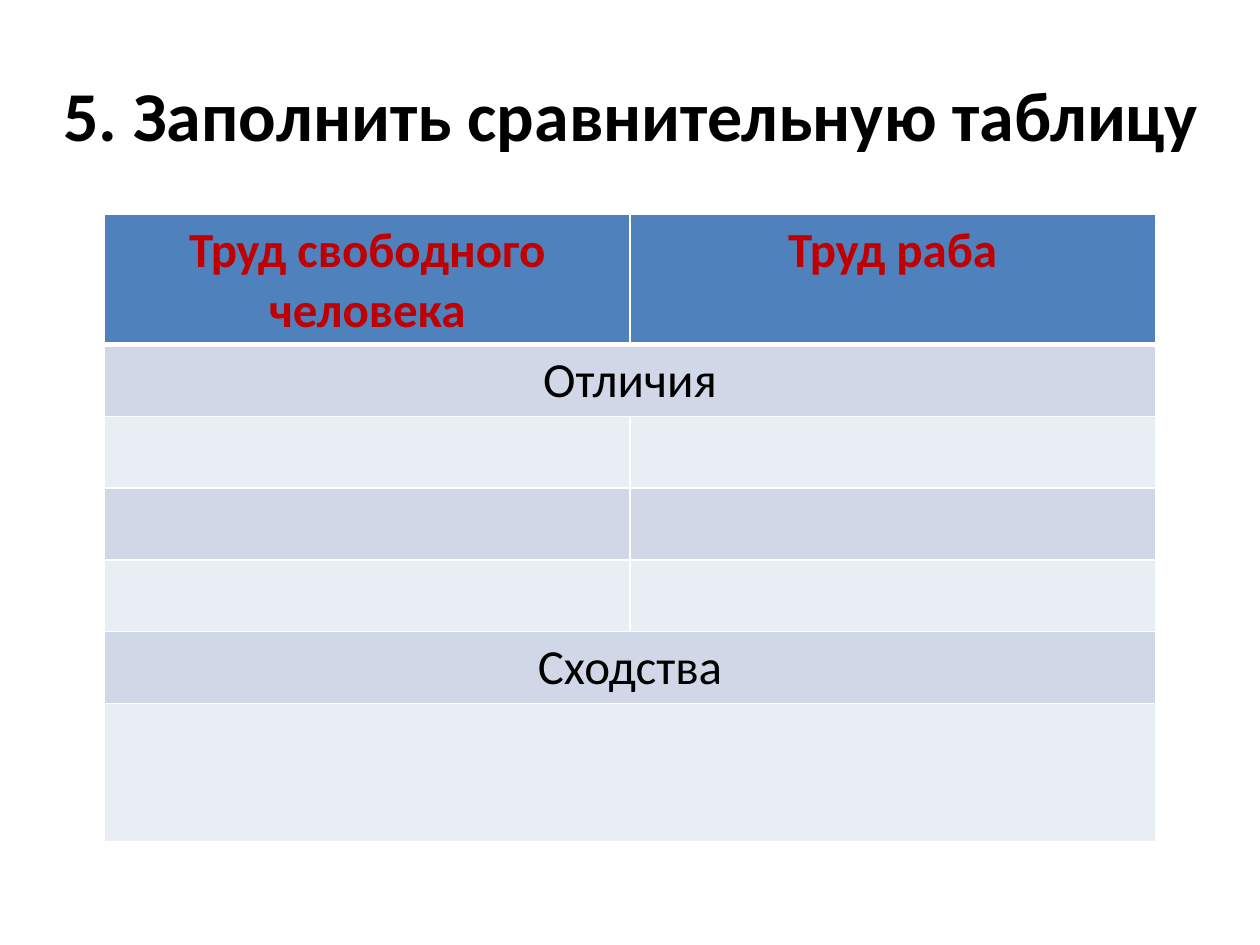
from lxml import etree
from pptx import Presentation
from pptx.dml.color import RGBColor
from pptx.enum.text import PP_ALIGN as Align
from pptx.oxml.ns import qn
from pptx.util import Inches, Pt


def rgb(value):
    return RGBColor.from_string(value)


class SlideBuilder:
    font = "Calibri"
    black = "000000"
    red = "C00000"
    white = "FFFFFF"
    header = "4F81BD"
    bands = ("E9EDF4", "D0D8E8")

    def __init__(self, prs):
        self.s = prs.slides.add_slide(prs.slide_layouts[6])

    def paragraph(self, p, text, size, color, bold):
        p.text = text
        p.alignment = Align.CENTER
        p.font.name = self.font
        p.font.size = Pt(size)
        p.font.bold = bold
        p.font.color.rgb = rgb(color)

    def title(self, text, left, top, width, height):
        box = self.s.shapes.add_textbox(
            Inches(left), Inches(top), Inches(width), Inches(height)
        )
        tf = box.text_frame
        tf.word_wrap = True
        self.paragraph(tf.paragraphs[0], text, 40, self.black, True)

    def borders(self, cell, bottom):
        tc_pr = cell._tc.get_or_add_tcPr()
        widths = {"lnL": 1, "lnR": 1, "lnT": 1, "lnB": bottom}
        for i, (side, width) in enumerate(widths.items()):
            ln = etree.Element(qn(f"a:{side}"), w=str(Pt(width)))
            fill = etree.SubElement(ln, qn("a:solidFill"))
            etree.SubElement(fill, qn("a:srgbClr"), val=self.white)
            tc_pr.insert(i, ln)

    def table(self, rows, heights, left, top, width):
        columns = len(rows[0])
        table = self.s.shapes.add_table(
            len(rows), columns, Inches(left), Inches(top),
            Inches(width), Inches(sum(heights)),
        ).table
        for i, (texts, height) in enumerate(zip(rows, heights)):
            table.rows[i].height = Inches(height)
            head = i == 0
            for j in range(columns):
                cell = table.cell(i, j)
                cell.fill.solid()
                cell.fill.fore_color.rgb = rgb(self.header if head else self.bands[i % 2])
                self.borders(cell, 3 if head else 1)
            if len(texts) < columns:
                table.cell(i, 0).merge(table.cell(i, columns - 1))
            for j, text in enumerate(texts):
                p = table.cell(i, j).text_frame.paragraphs[0]
                self.paragraph(p, text, 28, self.red if head else self.black, head)


def main():
    prs = Presentation()
    prs.slide_width = Inches(10)
    prs.slide_height = Inches(7.5)
    slide = SlideBuilder(prs)
    slide.title("5. Заполнить сравнительную таблицу", 0.28, 0.52, 9.45, 0.77)
    rows = [
        ("Труд свободного человека", "Труд раба"),
        ("Отличия",),
        *[("", "")] * 3,
        ("Сходства",),
        ("",),
    ]
    slide.table(rows, [1.03] + [0.57] * 5 + [1.1], 0.83, 1.7, 8.34)
    prs.save("out.pptx")


if __name__ == "__main__":
    main()
